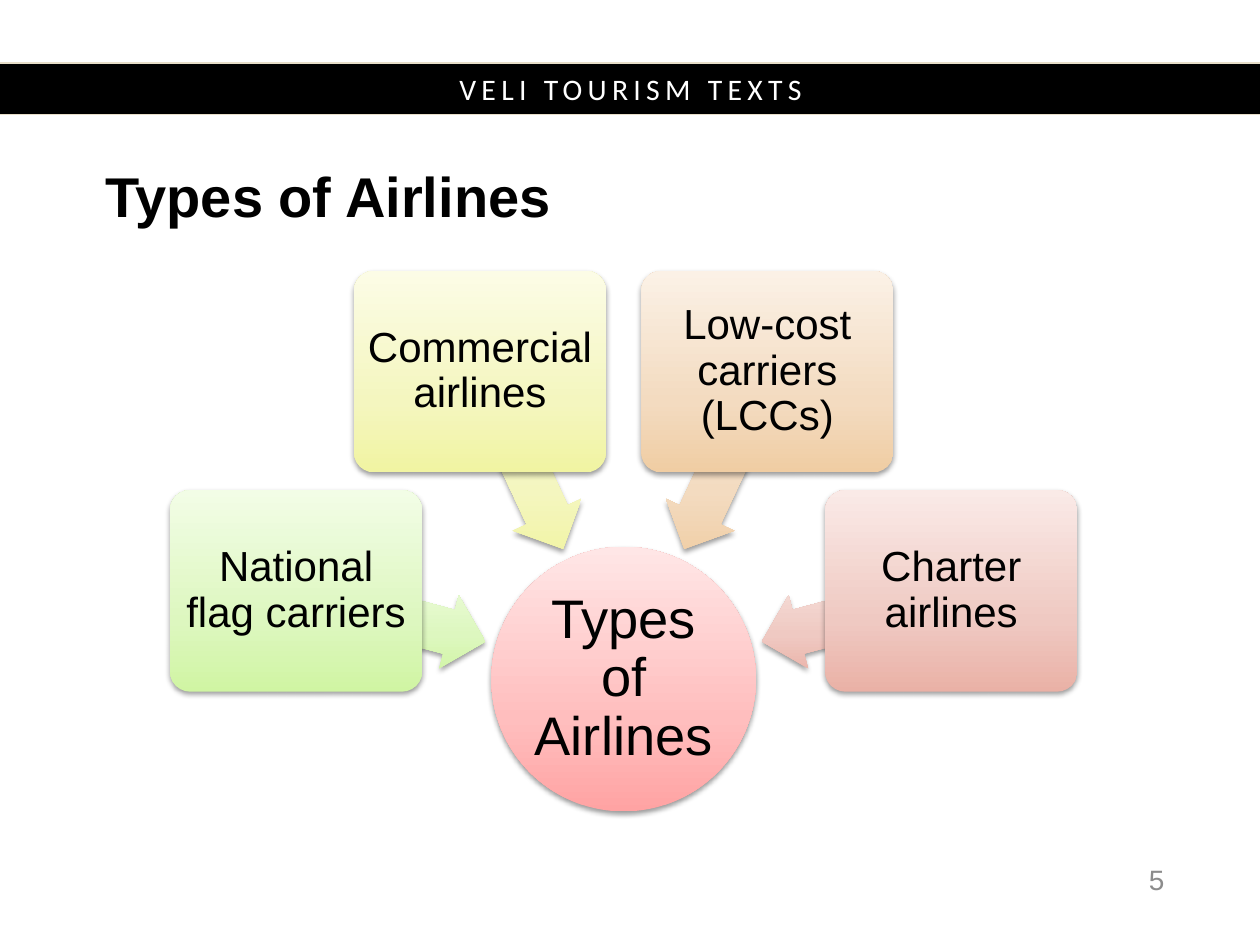
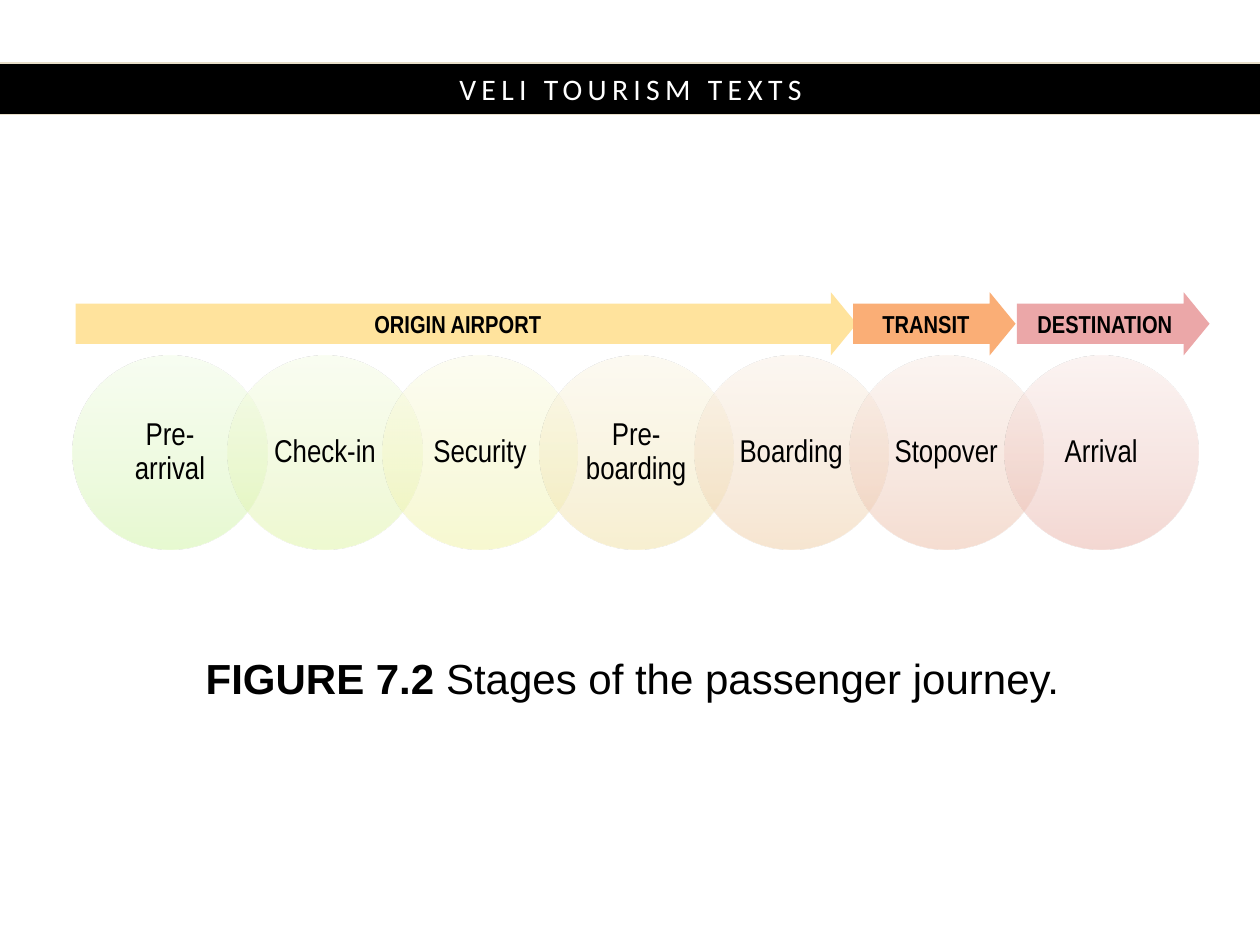
import math

import pptx
import pptx.dml.color
import pptx.enum.shapes
import pptx.enum.text
import pptx.oxml.ns
import pptx.util
from lxml import etree

EMU_PER_PX = 9144  # 100 px to the inch
SHAPE = pptx.enum.shapes.MSO_SHAPE
ALIGN = pptx.enum.text.PP_ALIGN
qn = pptx.oxml.ns.qn

COLOURS = {
    "text": "000000",
    "band": "000000",
    "band edge": "E7DEC9",
    "band text": "FFFFFF",
    "page number": "8C8C8C",
    "origin": "FFE39D",
    "transit": "FAAE76",
    "destination": "EBA7A8",
}
# Gradient colours from bottom to top
RAMPS = {
    "rose": ("FFA3A3", "FFBEBE", "FFE6E6"),
    "green": ("D0F5A3", "DDF7BF", "F2FDE6"),
    "lime": ("DFF5A2", "E7F6BF", "F6FDE6"),
    "yellow": ("F1F4A2", "F4F6BF", "FCFCE6"),
    "sand": ("F2E1A3", "F4E9BF", "FCF7E6"),
    "orange": ("F0CDA3", "F3DBC0", "FBF1E6"),
    "peach": ("EDBDA5", "F1D0C0", "FAEDE6"),
    "red": ("EAB1A6", "EFC9C2", "FAEAE7"),
}
RAMP_STOPS = (0, 35, 100)


def emu(px):
    return pptx.util.Emu(round(px * EMU_PER_PX))


def rgb(name):
    return pptx.dml.color.RGBColor.from_string(COLOURS[name])


def add_colour(parent, hex_colour, opacity):
    colour = etree.SubElement(parent, qn("a:srgbClr"), val=hex_colour)
    if opacity < 100:
        etree.SubElement(colour, qn("a:alpha"), val=str(opacity * 1000))


def write(shape, parts, size=24, font="Arial", colour="text", bold=False,
          align=ALIGN.CENTER, inset=(10, 5), line_spacing=None, tracking=0):
    """Fill a shape with one paragraph; parts is a string or (string, bold) pairs."""
    frame = shape.text_frame
    frame.word_wrap = True
    frame.vertical_anchor = pptx.enum.text.MSO_ANCHOR.MIDDLE
    frame.margin_left = frame.margin_right = emu(inset[0])
    frame.margin_top = frame.margin_bottom = emu(inset[1])
    paragraph = frame.paragraphs[0]
    paragraph.alignment = align
    if line_spacing:
        paragraph.line_spacing = line_spacing
    if isinstance(parts, str):
        parts = [(parts, bold)]
    for part, part_bold in parts:
        for number, line in enumerate(part.split("\n")):
            if number:
                paragraph.add_line_break()
            run = paragraph.add_run()
            run.text = line
            run.font.size = pptx.util.Pt(size)
            run.font.name = font
            run.font.bold = part_bold
            run.font.color.rgb = rgb(colour)
            if tracking:
                run.font._element.set("spc", str(tracking * 100))


class Deck:
    def __init__(self):
        self.presentation = pptx.Presentation()
        self.presentation.slide_width = emu(1000)
        self.presentation.slide_height = emu(750)
        self.slide = None

    def new_slide(self):
        self.slide = self.presentation.slides.add_slide(self.presentation.slide_layouts[6])
        band = self.shape(SHAPE.RECTANGLE, (-8, 50, 1017, 41), "band")
        band.line.color.rgb = rgb("band edge")
        band.line.width = pptx.util.Pt(0.75)
        write(band, "VELI TOURISM TEXTS", size=17, font="Calibri",
              colour="band text", tracking=3)

    def shape(self, kind, box, fill=None, adjustments=()):
        shape = self.slide.shapes.add_shape(kind, *map(emu, box))
        shape.shadow.inherit = False
        shape.line.fill.background()
        for number, value in enumerate(adjustments):
            shape.adjustments[number] = value
        if fill:
            shape.fill.solid()
            shape.fill.fore_color.rgb = rgb(fill)
        return shape

    def shaded(self, kind, box, ramp, adjustments=(), opacity=100, shadow=False):
        """Add a shape that gets lighter upwards, whatever its rotation."""
        shape = self.shape(kind, box, adjustments=adjustments)
        shape.fill.gradient()
        shape.fill.gradient_angle = 90
        properties = shape._element.spPr
        gradient = properties.find(qn("a:gradFill"))
        gradient.set("rotWithShape", "0")
        stops = gradient.find(qn("a:gsLst"))
        for stop in list(stops):
            stops.remove(stop)
        for position, colour in zip(RAMP_STOPS, RAMPS[ramp]):
            stop = etree.SubElement(stops, qn("a:gs"), pos=str(position * 1000))
            add_colour(stop, colour, opacity)
        if shadow:
            outer = etree.SubElement(
                properties.find(qn("a:effectLst")), qn("a:outerShdw"),
                blurRad=str(pptx.util.Pt(3.1)), dist=str(pptx.util.Pt(1.6)),
                dir="5400000", rotWithShape="0")
            add_colour(outer, "000000", 38)
        return shape

    def text(self, box, parts, **style):
        write(self.slide.shapes.add_textbox(*map(emu, box)), parts, **style)

    def title(self, box, parts, **style):
        self.text(box, parts, line_spacing=pptx.util.Pt(32), **style)


def around(centre, angle, radius, width, height):
    """Box of the given size whose middle lies at an angle and radius from centre."""
    x = centre[0] + radius * math.cos(math.radians(angle))
    y = centre[1] + radius * math.sin(math.radians(angle))
    return round(x - width / 2), round(y - height / 2), width, height


def airline_types(deck):
    deck.new_slide()
    deck.title((74, 135, 856, 48), "Types of Airlines", size=32, bold=True, align=ALIGN.LEFT)

    centre = (495, 539)
    hub = deck.shaded(SHAPE.OVAL, around(centre, 0, 0, 210, 210), "rose", shadow=True)
    write(hub, "Types of Airlines", size=31, inset=(2, 2), line_spacing=0.9)

    airlines = [
        ("National flag carriers", "green"),
        ("Commercial airlines", "yellow"),
        ("Low-cost carriers (LCCs)", "orange"),
        ("Charter airlines", "red"),
    ]
    for number, (airline, ramp) in enumerate(airlines):
        angle = 195 + 50 * number
        arrow = deck.shaded(SHAPE.LEFT_ARROW, around(centre, angle, 192, 156, 60), ramp,
                            adjustments=(0.6, 0.5), shadow=True)
        arrow.rotation = angle
        card = deck.shaded(SHAPE.ROUNDED_RECTANGLE, around(centre, angle, 269, 200, 160), ramp,
                           adjustments=(0.1,), shadow=True)
        write(card, airline, inset=(5, 5), line_spacing=0.9)

    deck.text((701, 678, 233, 40), "5", size=16, colour="page number", align=ALIGN.RIGHT)


def passenger_journey(deck):
    deck.new_slide()
    stages = [
        ("Pre-\narrival", "green"),
        ("Check-in", "lime"),
        ("Security", "yellow"),
        ("Pre-boarding", "sand"),
        ("Boarding", "orange"),
        ("Stopover", "peach"),
        ("Arrival", "red"),
    ]
    for number, (stage, ramp) in enumerate(stages):
        circle = deck.shaded(SHAPE.OVAL, (58 + round(123.2 * number), 282, 154, 154), ramp,
                             opacity=50)
        write(circle, stage, size=18, font="Arial Narrow", inset=(8, 3), line_spacing=0.9)

    phases = [
        ("ORIGIN AIRPORT", "origin", 60, 620, 10),
        ("TRANSIT", "transit", 677, 129, 10),
        ("DESTINATION", "destination", 807, 153, 0),
    ]
    for phase, colour, left, width, side_inset in phases:
        arrow = deck.shape(SHAPE.RIGHT_ARROW, (left, 232, width, 50), colour,
                           adjustments=(0.64, 0.41))
        write(arrow, phase, size=14, font="Arial Narrow", bold=True, inset=(side_inset, 0))

    deck.title((74, 507, 856, 58),
               [("FIGURE 7.2 ", True), ("Stages of the passenger journey.", False)])


def main():
    deck = Deck()
    airline_types(deck)
    passenger_journey(deck)
    deck.presentation.save("out.pptx")


if __name__ == "__main__":
    main()
